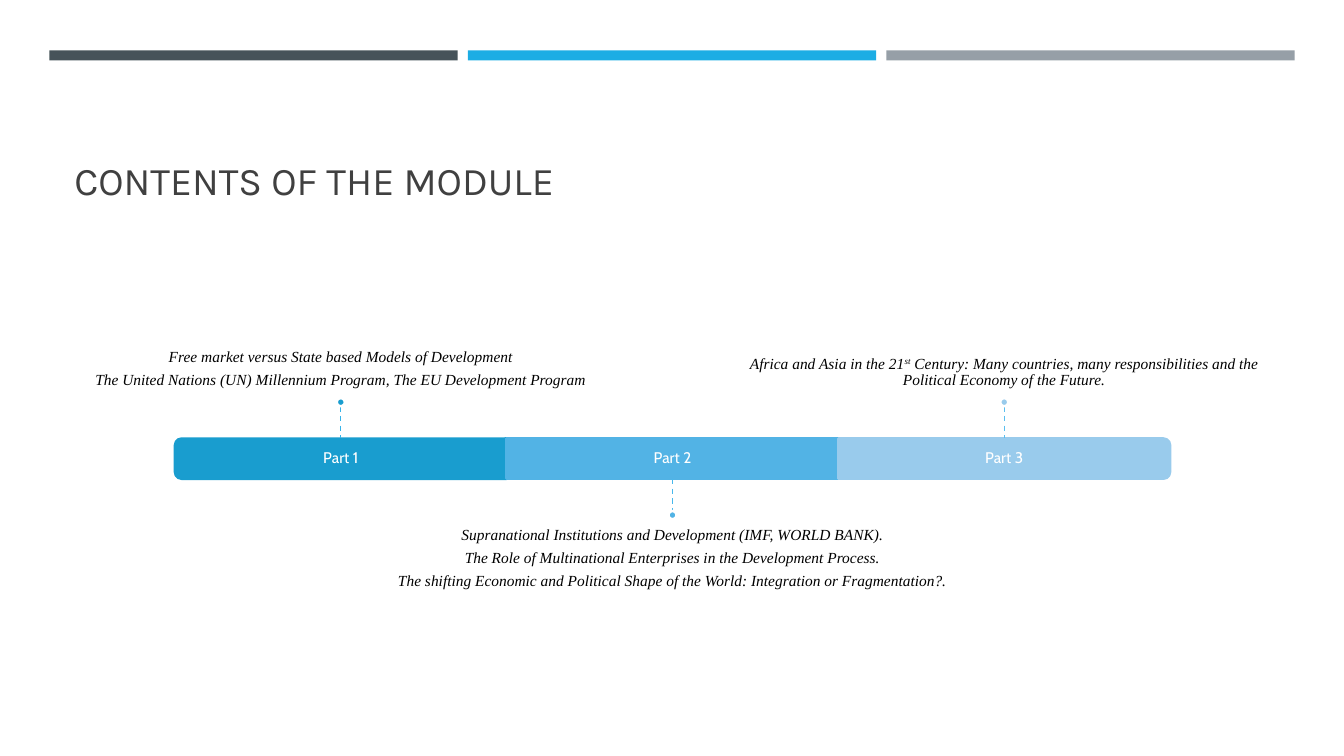
"""Builds the module contents slide with a three-part timeline."""
from lxml.etree import SubElement
from pptx import Presentation
from pptx.dml.color import RGBColor
from pptx.enum.dml import MSO_LINE
from pptx.enum.shapes import MSO_CONNECTOR, MSO_SHAPE
from pptx.enum.text import MSO_ANCHOR, PP_ALIGN
from pptx.oxml.ns import qn
from pptx.util import Inches, Pt

WHITE = RGBColor(0xFF, 0xFF, 0xFF)
BLACK = RGBColor(0x00, 0x00, 0x00)
TITLE_GRAY = RGBColor(0x40, 0x40, 0x40)
SLATE = RGBColor(0x46, 0x53, 0x59)
BRIGHT_BLUE = RGBColor(0x1C, 0xAD, 0xE4)
GRAY = RGBColor(0x96, 0x9F, 0xA7)
DEEP_BLUE = RGBColor(0x19, 0x9D, 0xCF)
MID_BLUE = RGBColor(0x52, 0xB3, 0xE5)
PALE_BLUE = RGBColor(0x99, 0xCB, 0xEC)
STEM_DEEP = RGBColor(0x36, 0xB3, 0xE9)
STEM_MID = RGBColor(0x48, 0xB8, 0xEC)
STEM_PALE = RGBColor(0x5A, 0xBE, 0xEF)

BAR_TOP, BAR_WIDTH, BAR_HEIGHT = 4.35, 3.29, 0.4
STEM_LENGTH, DOT_SIZE = 0.32, 0.08
DETAIL_WIDTH, DETAIL_HEIGHT = 5.48, 1.39

SECTIONS = [
    {"name": "Part 1", "fill": DEEP_BLUE, "stem": STEM_DEEP, "rotation": 270, "above": True,
     "details": [["Free market versus State based Models of Development"],
                 ["The United Nations (UN) Millennium Program, The EU Development Program"]]},
    {"name": "Part 2", "fill": MID_BLUE, "stem": STEM_MID, "rotation": None, "above": False,
     "details": [["Supranational Institutions and Development (IMF, WORLD BANK)."],
                 ["The Role of Multinational Enterprises in the Development Process."],
                 ["The shifting Economic and Political Shape of the World: "
                  "Integration or Fragmentation?."]]},
    {"name": "Part 3", "fill": PALE_BLUE, "stem": STEM_PALE, "rotation": 90, "above": True,
     "details": [["Africa and Asia in the 21", "st",
                  " Century: Many countries, many responsibilities and the "
                  "Political Economy of the Future."]]},
]


class TimelineSlide:
    """Holds the text styles and the slide, and draws each kind of element."""

    title_font = {"name": "Karla", "size": Pt(28), "color": TITLE_GRAY}
    label_font = {"name": "Cabin", "size": Pt(11), "color": WHITE}
    detail_font = {"name": "Times New Roman", "size": Pt(11), "color": BLACK, "italic": True}
    centered = {"alignment": PP_ALIGN.CENTER, "line_spacing": 0.9, "space_after": Pt(4.4)}

    def __init__(self, presentation):
        self.slide = presentation.slides.add_slide(presentation.slide_layouts[6])

    def block(self, kind, left, top, width, height, fill, line=None):
        shape = self.slide.shapes.add_shape(
            kind, Inches(left), Inches(top), Inches(width), Inches(height))
        shape.shadow.inherit = False
        shape.fill.solid()
        shape.fill.fore_color.rgb = fill
        if line is None:
            shape.line.fill.background()
        else:
            shape.line.color.rgb = line
            shape.line.width = Pt(1.75)
        return shape

    def text(self, left, top, width, height, paragraphs, font, anchor, margins, layout):
        box = self.slide.shapes.add_textbox(
            Inches(left), Inches(top), Inches(width), Inches(height))
        frame = box.text_frame
        frame.word_wrap = True
        frame.vertical_anchor = anchor
        for side, margin in zip(("left", "top", "right", "bottom"), margins):
            setattr(frame, f"margin_{side}", Inches(margin))
        for index, runs in enumerate(paragraphs):
            paragraph = frame.add_paragraph() if index else frame.paragraphs[0]
            for attribute, value in layout.items():
                setattr(paragraph, attribute, value)
            for content in runs:
                self.run(paragraph, content, font)

    def run(self, paragraph, content, font):
        run = paragraph.add_run()
        run.text = content
        for attribute, value in font.items():
            if attribute == "color":
                run.font.color.rgb = value
            else:
                setattr(run.font, attribute, value)
        if content == "st":
            run.font._element.set("baseline", "30000")

    def stem(self, center, start, end, color):
        connector = self.slide.shapes.add_connector(
            MSO_CONNECTOR.STRAIGHT, Inches(center), Inches(start), Inches(center), Inches(end))
        connector.line.color.rgb = color
        connector.line.width = Pt(1)
        connector.line.dash_style = MSO_LINE.DASH
        SubElement(connector._element.spPr, qn("a:effectLst"))

    def bar(self, center, fill, rotation):
        middle = BAR_TOP + BAR_HEIGHT / 2
        kind, width, height = MSO_SHAPE.RECTANGLE, BAR_WIDTH, BAR_HEIGHT
        if rotation is not None:
            kind, width, height = MSO_SHAPE.ROUND_2_SAME_RECTANGLE, BAR_HEIGHT, BAR_WIDTH
        shape = self.block(kind, center - width / 2, middle - height / 2, width, height, fill, fill)
        shape.rotation = rotation or 0

    def section(self, center, section):
        self.bar(center, section["fill"], section["rotation"])
        self.text(center - BAR_WIDTH / 2, BAR_TOP, BAR_WIDTH, BAR_HEIGHT, [[section["name"]]],
                  self.label_font, MSO_ANCHOR.MIDDLE, (0.09,) * 4, self.centered)
        if section["above"]:
            start, end = BAR_TOP - STEM_LENGTH, BAR_TOP
            dot_top, detail_top = start - DOT_SIZE, 2.56
            anchor, margins = MSO_ANCHOR.BOTTOM, (0, 0, 0, 0.09)
        else:
            start = BAR_TOP + BAR_HEIGHT
            end = start + STEM_LENGTH
            dot_top, detail_top = end, 5.14
            anchor, margins = MSO_ANCHOR.TOP, (0, 0.09, 0, 0)
        self.text(center - DETAIL_WIDTH / 2, detail_top, DETAIL_WIDTH, DETAIL_HEIGHT,
                  section["details"], self.detail_font, anchor, margins, self.centered)
        self.stem(center, start, end, section["stem"])
        self.block(MSO_SHAPE.OVAL, center - DOT_SIZE / 2, dot_top, DOT_SIZE, DOT_SIZE,
                   section["fill"], WHITE)


def main():
    presentation = Presentation()
    presentation.slide_width = Inches(13.33)
    presentation.slide_height = Inches(7.5)
    timeline = TimelineSlide(presentation)
    for index, color in enumerate((SLATE, BRIGHT_BLUE, GRAY)):
        timeline.block(MSO_SHAPE.RECTANGLE, 0.49 + 4.15 * index, 0.5, 4.05, 0.1, color)
    timeline.text(0.64, 0.77, 12.06, 1.3, [["CONTENTS OF THE MODULE"]], timeline.title_font,
                  MSO_ANCHOR.BOTTOM, (0.1, 0.05, 0.1, 0.05), {"line_spacing": 0.9})
    for index, section in enumerate(SECTIONS):
        timeline.section(6.67 + BAR_WIDTH * (index - 1), section)
    presentation.save("out.pptx")


if __name__ == "__main__":
    main()
